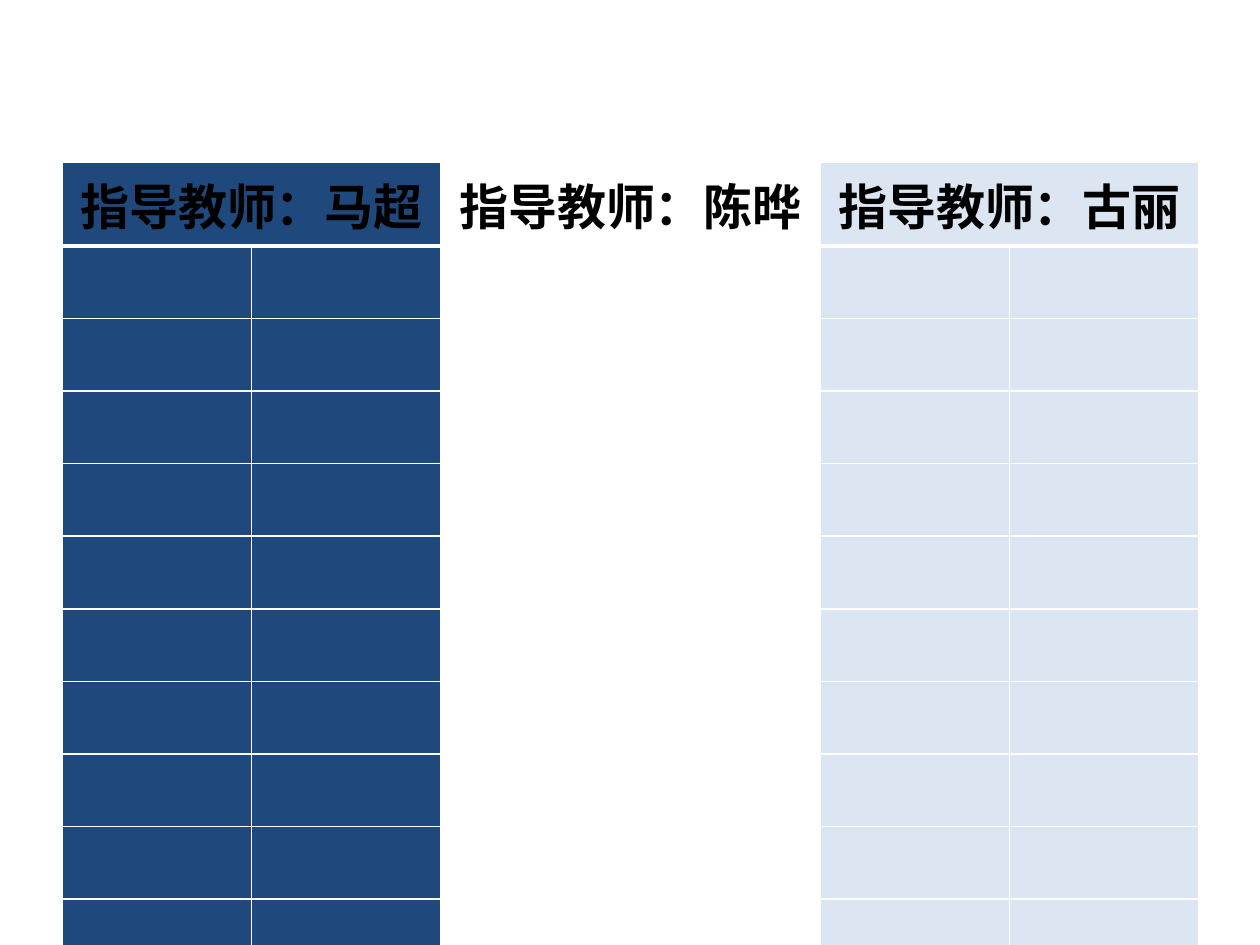
from lxml.etree import SubElement
from pptx import Presentation
from pptx.dml.color import RGBColor
from pptx.enum.text import PP_ALIGN
from pptx.oxml.ns import qn
from pptx.util import Cm, Pt


def color(code):
    return RGBColor.from_string(code)


def edge(cell, side, width):
    line = SubElement(cell._tc.get_or_add_tcPr(), qn("a:ln" + side), w=str(Pt(width)))
    fill = SubElement(line, qn("a:solidFill"))
    SubElement(fill, qn("a:srgbClr"), val="FFFFFF")


groups = [
    ("指导教师：马超", "1F497D"),
    ("指导教师：陈晔", "FFFFFF"),
    ("指导教师：古丽", "DCE6F2"),
]
style = {"name": "Arial", "size": Pt(28), "bold": True}
rows, cols = 12, 2 * len(groups)

deck = Presentation()
deck.slide_width, deck.slide_height = Cm(25.4), Cm(19.05)
slide = deck.slides.add_slide(deck.slide_layouts[6])
table = slide.shapes.add_table(
    rows, cols, Cm(1.25), Cm(3.28), Cm(22.92), Cm(12.19)
).table
table.horz_banding = False

for col in table.columns:
    col.width = Cm(3.82)
for row in table.rows:
    row.height = Cm(1.02)

for r in range(rows):
    for c in range(cols):
        cell = table.cell(r, c)
        for side in "LRTB":
            thick = (r, side) in [(0, "B"), (1, "T")]
            edge(cell, side, 3 if thick else 1)
        cell.fill.solid()
        cell.fill.fore_color.rgb = color(groups[c // 2][1])
        if r:
            para = cell.text_frame.paragraphs[0]
            SubElement(para._p, qn("a:endParaRPr"), sz="2800")

for i, (title, tint) in enumerate(groups):
    head = table.cell(0, 2 * i)
    head.merge(table.cell(0, 2 * i + 1))
    para = head.text_frame.paragraphs[0]
    para.alignment = PP_ALIGN.CENTER
    run = para.add_run()
    run.text = title
    for key, value in style.items():
        setattr(run.font, key, value)
    run.font.color.rgb = color("000000")

deck.save("out.pptx")
